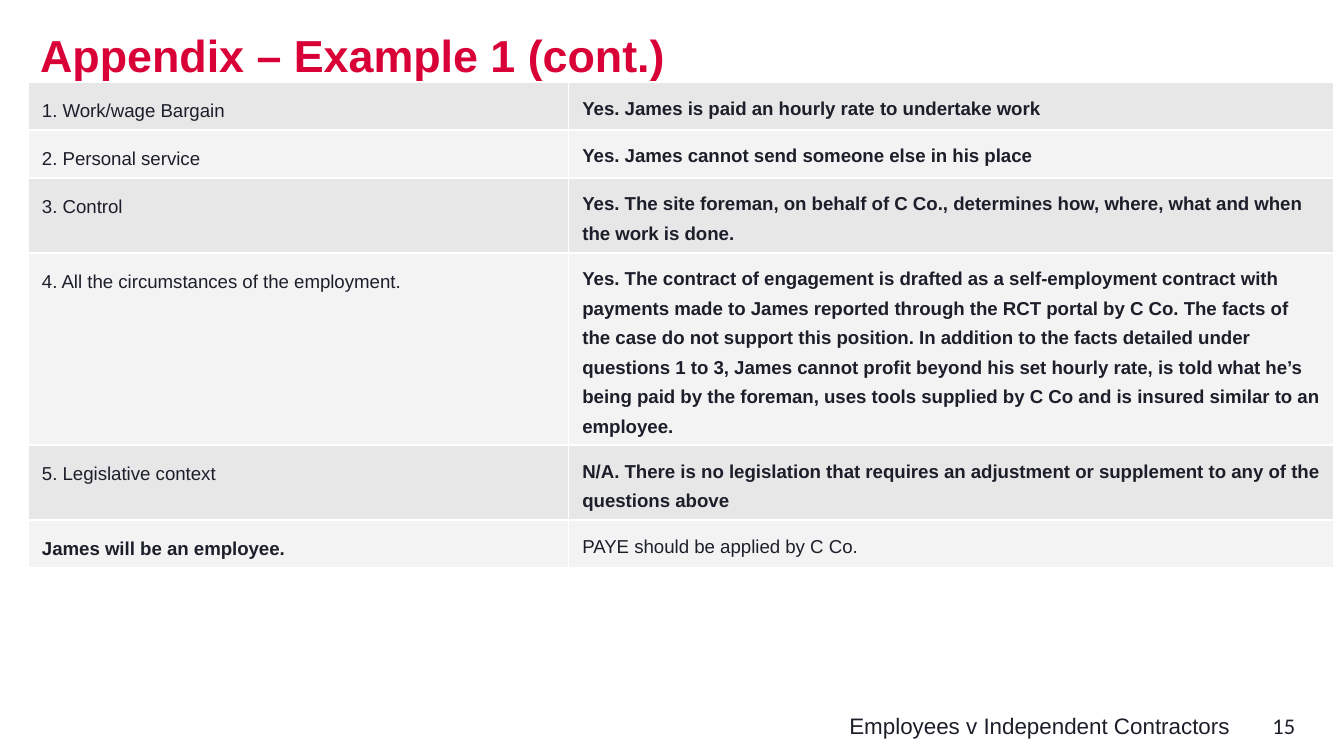
from dataclasses import dataclass

from lxml.etree import SubElement
from pptx import Presentation
from pptx.dml.color import RGBColor
from pptx.enum.text import MSO_VERTICAL_ANCHOR as Anchor, PP_PARAGRAPH_ALIGNMENT as Align
from pptx.oxml.ns import qn
from pptx.slide import Slide
from pptx.table import _Cell as Cell
from pptx.util import Pt

COLOURS = {
    "title": "D90038",
    "text": "1C1F2A",
    "band_dark": "E7E7E8",
    "band_light": "F3F3F4",
    "border": "FFFFFF",
}
COLUMN_WIDTHS = (289.5, 410)
LINE_SPACINGS = (17.3, 15.8)
CELL_MARGINS = {"margin_left": 7.5, "margin_right": 7, "margin_top": 4.1, "margin_bottom": 4.1}


@dataclass(frozen=True)
class Label:
    text: str
    left: float
    top: float
    width: float
    height: float
    size: float
    margin_top: float = 3.6
    font: str = "Arial"
    colour: str = "text"
    bold: bool = False
    align: Align = Align.LEFT


@dataclass(frozen=True)
class TestRow:
    question: str
    answer: str
    height: float
    conclusion: bool = False


LABELS = (
    Label("Appendix – Example 1 (cont.)", 14.4, 8.6, 705, 35.3, 24, 6.5, colour="title", bold=True),
    Label("Employees v Independent Contractors ", 442, 378, 227.5, 18.7, 12, align=Align.RIGHT),
    Label("15", 674.6, 378, 43, 21.6, 12, font="Calibri"),
)
ROWS = (
    TestRow("1. Work/wage Bargain", "Yes. James is paid an hourly rate to undertake work", 25.7),
    TestRow("2. Personal service", "Yes. James cannot send someone else in his place", 25.7),
    TestRow(
        "3. Control",
        "Yes. The site foreman, on behalf of C Co., determines how, where, what and when "
        "the work is done.",
        40.2,
    ),
    TestRow(
        "4. All the circumstances of the employment.",
        "Yes. The contract of engagement is drafted as a self-employment contract with "
        "payments made to James reported through the RCT portal by C Co. The facts of "
        "the case do not support this position. In addition to the facts detailed under "
        "questions 1 to 3, James cannot profit beyond his set hourly rate, is told what he’s "
        "being paid by the foreman, uses tools supplied by C Co and is insured similar to "
        "an employee.",
        102.8,
    ),
    TestRow(
        "5. Legislative context",
        "N/A. There is no legislation that requires an adjustment or supplement to any of the "
        "questions above",
        40.2,
    ),
    TestRow("James will be an employee.", "PAYE should be applied by C Co.", 25.7, conclusion=True),
)


def apply_format(target: object, values: dict) -> None:
    """Set each attribute named in the format values."""
    for name, value in values.items():
        setattr(target, name, value)


def write_text(frame, text: str, font: dict, colour: str, paragraph_format: dict) -> None:
    """Write one formatted paragraph into a text frame."""
    paragraph = frame.paragraphs[0]
    apply_format(paragraph, paragraph_format)
    run = paragraph.add_run()
    run.text = text
    apply_format(run.font, font)
    run.font.color.rgb = RGBColor.from_string(COLOURS[colour])


def draw_label(slide: Slide, label: Label) -> None:
    """Draw a text box outside the table."""
    box = slide.shapes.add_textbox(
        Pt(label.left), Pt(label.top), Pt(label.width), Pt(label.height)
    )
    frame = box.text_frame
    apply_format(frame, {
        "word_wrap": True,
        "vertical_anchor": Anchor.TOP,
        "margin_left": Pt(7.2),
        "margin_right": Pt(7.2),
        "margin_top": Pt(label.margin_top),
        "margin_bottom": Pt(0),
    })
    font = {"name": label.font, "size": Pt(label.size), "bold": label.bold}
    write_text(frame, label.text, font, label.colour, {"alignment": label.align})


def draw_borders(cell: Cell) -> None:
    """Give a cell thin borders on all four sides."""
    properties = cell._tc.get_or_add_tcPr()
    for position, side in enumerate(("lnL", "lnR", "lnT", "lnB")):
        line = properties.makeelement(qn(f"a:{side}"), {"w": str(Pt(1))})
        properties.insert(position, line)
        fill = SubElement(line, qn("a:solidFill"))
        SubElement(fill, qn("a:srgbClr"), val=COLOURS["border"])


def draw_cell(cell: Cell, text: str, bold: bool, spacing: float, band: str) -> None:
    """Fill, border and write one table cell."""
    apply_format(cell, {name: Pt(value) for name, value in CELL_MARGINS.items()})
    cell.vertical_anchor = Anchor.TOP
    cell.fill.solid()
    cell.fill.fore_color.rgb = RGBColor.from_string(COLOURS[band])
    draw_borders(cell)
    font = {"name": "Arial", "size": Pt(10), "bold": bold}
    write_text(cell.text_frame, text, font, "text", {"line_spacing": Pt(spacing)})


def draw_table(slide: Slide, rows: tuple[TestRow, ...]) -> None:
    """Draw the employment test table with alternating bands."""
    table = slide.shapes.add_table(
        len(rows), len(COLUMN_WIDTHS), Pt(15), Pt(43.9),
        Pt(sum(COLUMN_WIDTHS)), Pt(sum(row.height for row in rows)),
    ).table
    apply_format(table, {"first_row": False, "horz_banding": False})
    for column, width in zip(table.columns, COLUMN_WIDTHS):
        column.width = Pt(width)
    for index, row in enumerate(rows):
        table.rows[index].height = Pt(row.height)
        band = "band_light" if index % 2 else "band_dark"
        texts = (row.question, row.answer)
        weights = (row.conclusion, not row.conclusion)
        for column, (text, bold, spacing) in enumerate(zip(texts, weights, LINE_SPACINGS)):
            draw_cell(table.cell(index, column), text, bold, spacing, band)


def main() -> None:
    """Build and save the presentation."""
    presentation = Presentation()
    apply_format(presentation, {"slide_width": Pt(720), "slide_height": Pt(405)})
    slide = presentation.slides.add_slide(presentation.slide_layouts[6])
    for label in LABELS:
        draw_label(slide, label)
    draw_table(slide, ROWS)
    presentation.save("out.pptx")


if __name__ == "__main__":
    main()
